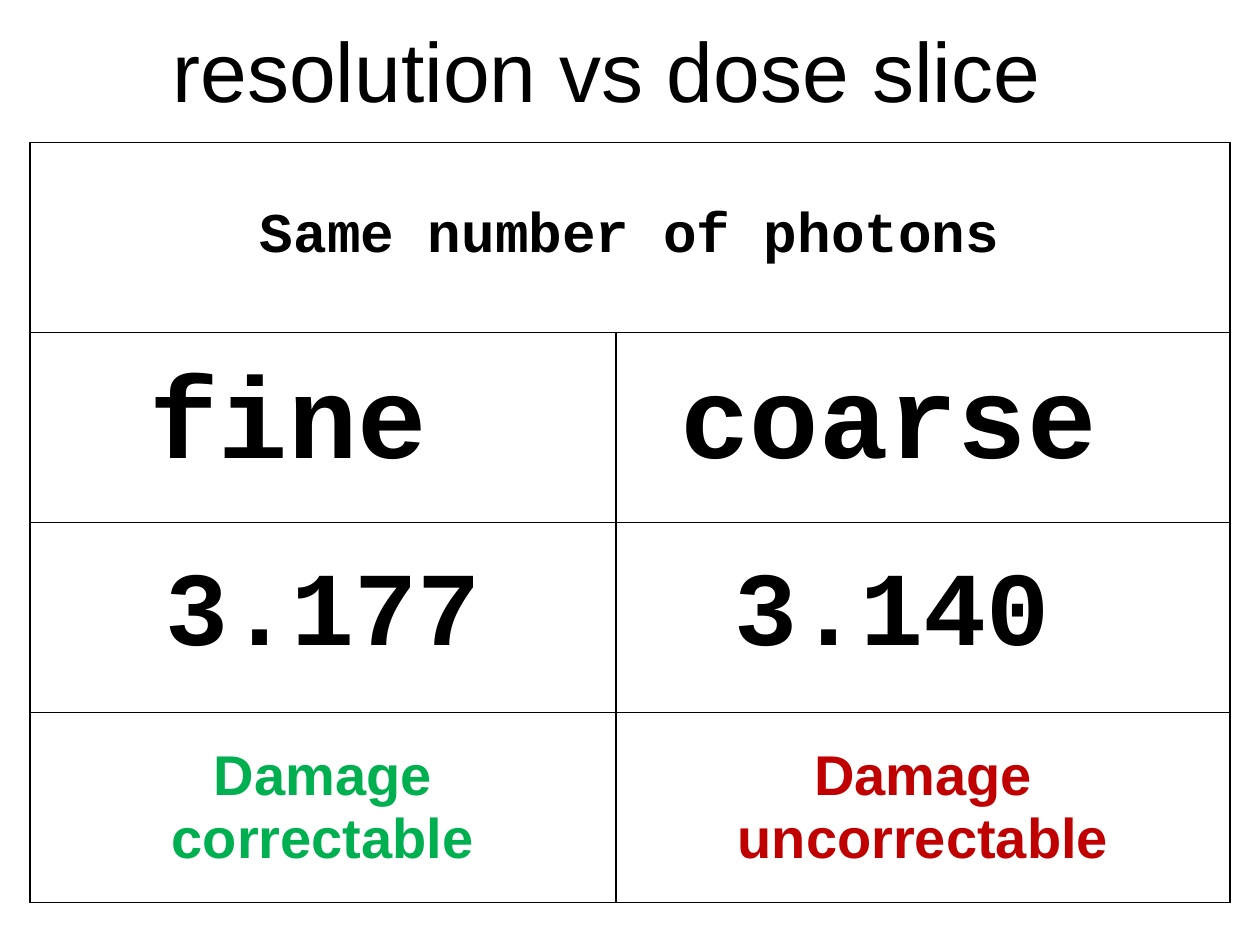
from lxml import etree
from pptx import Presentation
from pptx.dml.color import RGBColor
from pptx.enum.text import MSO_ANCHOR as Anchor, MSO_AUTO_SIZE as AutoSize, PP_ALIGN as Align
from pptx.oxml.ns import qn
from pptx.util import Cm, Pt

SANS, MONO = "Arial", "Courier New"
BLACK, GREEN, RED = "000000", "00B050", "C00000"


def color(value):
    return RGBColor.from_string(value)


def write(tf, text, size=32, font=MONO, ink=BLACK, bold=True, align=Align.CENTER):
    """Fill a text frame, one paragraph per line of text."""
    for i, line in enumerate(text.split("\n")):
        p = tf.add_paragraph() if i else tf.paragraphs[0]
        p.alignment = align
        r = p.add_run()
        r.text = line
        r.font.size, r.font.name, r.font.bold = Pt(size), font, bold
        r.font.color.rgb = color(ink)


class SlideBuilder:
    border_color = BLACK
    border_width = Pt(1)

    def __init__(self, s):
        self.s = s

    def title(self, text, x, y, w, h):
        tf = self.s.shapes.add_textbox(Cm(x), Cm(y), Cm(w), Cm(h)).text_frame
        tf.word_wrap = False
        tf.auto_size = AutoSize.SHAPE_TO_FIT_TEXT
        write(tf, text, size=48, font=SANS, bold=False, align=Align.LEFT)

    def border(self, cell):
        tcPr = cell._tc.get_or_add_tcPr()
        for i, side in enumerate(("lnL", "lnR", "lnT", "lnB")):
            ln = etree.Element(qn(f"a:{side}"), w=str(self.border_width))
            fill = etree.SubElement(ln, qn("a:solidFill"))
            etree.SubElement(fill, qn("a:srgbClr"), val=self.border_color)
            tcPr.insert(i, ln)

    def table(self, rows, x, y, widths, row_height):
        """Each row lists (text, format) pairs; a lone pair spans the row."""
        frame = self.s.shapes.add_table(len(rows), len(widths), Cm(x), Cm(y),
                                        Cm(sum(widths)), Cm(row_height * len(rows)))
        table = frame.table
        table.first_row = table.horz_banding = False
        for column, width in zip(table.columns, widths):
            column.width = Cm(width)
        for i, row in enumerate(rows):
            table.rows[i].height = Cm(row_height)
            if len(row) == 1:
                table.cell(i, 0).merge(table.cell(i, len(widths) - 1))
            for j, (text, style) in enumerate(row):
                write(table.cell(i, j).text_frame, text, **style)
        for cell in table.iter_cells():
            cell.fill.background()
            cell.vertical_anchor = Anchor.MIDDLE
            cell.margin_left = cell.margin_right = Cm(0.18)
            cell.margin_top = cell.margin_bottom = Cm(0.1)
            self.border(cell)


def main():
    prs = Presentation()
    prs.slide_width, prs.slide_height = Cm(25.4), Cm(19.05)
    slide = SlideBuilder(prs.slides.add_slide(prs.slide_layouts[6]))

    # Comparison table
    heading, number = dict(size=66), dict(size=60)
    rows = [
        [("Same number of photons", {})],
        [("fine ", heading), ("coarse ", heading)],
        [("3.177", number), ("3.140 ", number)],
        [("Damage\ncorrectable", dict(font=SANS, ink=GREEN)),
         ("Damage\nuncorrectable", dict(font=SANS, ink=RED))],
    ]
    slide.table(rows, x=0.6, y=2.87, widths=(11.82, 12.38), row_height=3.83)

    # Title
    slide.title("resolution vs dose slice", 3.23, 0.25, 18.21, 2.31)

    prs.save("out.pptx")


if __name__ == "__main__":
    main()
